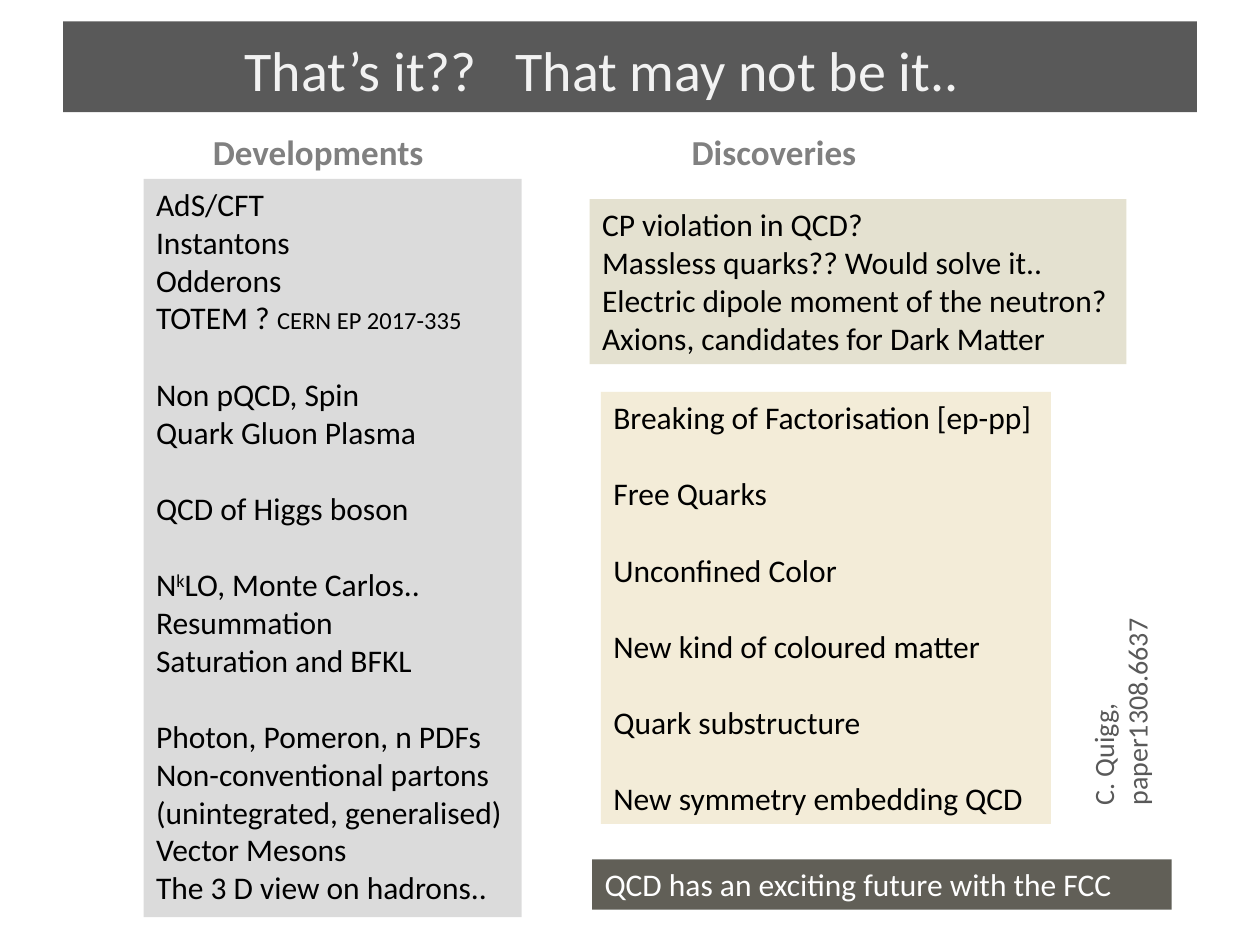
from dataclasses import dataclass

from lxml.etree import SubElement
from pptx import Presentation
from pptx.dml.color import RGBColor
from pptx.enum.shapes import MSO_SHAPE as Shape
from pptx.enum.text import MSO_ANCHOR as Anchor, PP_ALIGN as Align
from pptx.oxml.ns import qn
from pptx.util import Inches, Pt

COLORS = {
    "black": "000000", "white": "FFFFFF", "light": "F2F2F2",
    "dark": "595959", "grey": "808080", "gold": "DDC98E",
    "sand": "DDD9C3", "olive": "1E1C11",
}
GROUP_GAP = Pt(22)  # one line of 18 pt text


@dataclass
class Span:
    text: str
    size: int | None = None
    superscript: bool = False


Line = str | list[Span]


@dataclass
class Panel:
    """Filled box whose groups of lines are set apart by GROUP_GAP."""
    box: tuple[float, float, float, float]
    fill: str
    alpha: int
    groups: list[list[Line]]
    color: str = "black"


PANELS = [
    Panel((1.14, 1.42, 3, 5.86), "black", 14, [
        ["AdS/CFT", "Instantons", "Odderons",
         [Span("TOTEM ? "), Span("CERN EP 2017-335", size=14)]],
        ["Non pQCD, Spin", "Quark Gluon Plasma"],
        ["QCD of Higgs boson"],
        [[Span("N"), Span("k", superscript=True), Span("LO, Monte Carlos..")],
         "Resummation", "Saturation and BFKL"],
        ["Photon, Pomeron, n PDFs", "Non-conventional partons",
         "(unintegrated, generalised)", "Vector Mesons",
         "The 3 D view on hadrons.."],
    ]),
    Panel((4.77, 3.11, 3.57, 3.43), "gold", 34, [
        ["Breaking of Factorisation [ep-pp]"],
        ["Free Quarks"],
        ["Unconfined Color"],
        ["New kind of coloured matter"],
        ["Quark substructure"],
        ["New symmetry embedding QCD"],
    ]),
    Panel((4.68, 1.58, 4.26, 1.31), "sand", 78, [
        ["CP violation in QCD?", "Massless quarks?? Would solve it..",
         "Electric dipole moment of the neutron?",
         "Axions, candidates for Dark Matter"],
    ]),
    Panel((4.7, 6.82, 4.6, 0.4), "olive", 70,
          [["QCD has an exciting future with the FCC"]], "white"),
]


def rgb(name: str) -> RGBColor:
    return RGBColor.from_string(COLORS[name])


def fill_solid(s, color: str, alpha: int = 100) -> None:
    s.fill.solid()
    s.fill.fore_color.rgb = rgb(color)
    if alpha < 100:
        clr = s._element.spPr.find(qn("a:solidFill"))[0]
        SubElement(clr, qn("a:alpha"), val=str(alpha * 1000))


def add_run(p, text: str, size: int, color: str, bold: bool = False):
    r = p.add_run()
    r.text = text
    for name, value in {"name": "Calibri", "size": Pt(size), "bold": bold}.items():
        setattr(r.font, name, value)
    r.font.color.rgb = rgb(color)
    return r


def set_tab(p, pos: float) -> None:
    tabs = SubElement(p._p.get_or_add_pPr(), qn("a:tabLst"))
    SubElement(tabs, qn("a:tab"), pos=str(Inches(pos)), algn="l")


def add_panel(slide, panel: Panel) -> None:
    s = slide.shapes.add_shape(Shape.RECTANGLE, *map(Inches, panel.box))
    s.shadow.inherit = False
    s.line.fill.background()
    fill_solid(s, panel.fill, panel.alpha)
    tf = s.text_frame
    tf.word_wrap = True
    tf.vertical_anchor = Anchor.TOP
    p = None
    for group in panel.groups:
        for i, line in enumerate(group):
            first = p is None
            p = tf.paragraphs[0] if first else tf.add_paragraph()
            p.alignment = Align.LEFT
            if i == 0 and not first:
                p.space_before = GROUP_GAP
            for span in [Span(line)] if isinstance(line, str) else line:
                r = add_run(p, span.text, span.size or 18, panel.color)
                if span.superscript:
                    r._r.get_or_add_rPr().set("baseline", "30000")


def add_label(slide, box: tuple[float, float, float, float], text: str,
              size: int, color: str, bold: bool = False):
    s = slide.shapes.add_textbox(*map(Inches, box))
    s.text_frame.word_wrap = True
    add_run(s.text_frame.paragraphs[0], text, size, color, bold)
    return s


def format_title(s) -> None:
    box = {"left": 0.5, "top": 0.17, "width": 9, "height": 0.72}
    for name, value in box.items():
        setattr(s, name, Inches(value))
    fill_solid(s, "dark")
    tf = s.text_frame
    tf.vertical_anchor = Anchor.MIDDLE
    tf.margin_left, tf.margin_top = Inches(1.44), Inches(0.09)
    p = tf.paragraphs[0]
    p.alignment = Align.LEFT
    set_tab(p, 2.15)
    add_run(p, "That’s it??\tThat may not be it..", 32, "light")


def main() -> None:
    prs = Presentation()
    prs.slide_width, prs.slide_height = Inches(10), Inches(7.5)
    slide = prs.slides.add_slide(prs.slide_layouts[5])
    format_title(slide.shapes.title)
    for panel in PANELS:
        add_panel(slide, panel)

    headings = add_label(slide, (1.53, 0.99, 5.84, 0.44),
                         "Developments\tDiscoveries", 20, "grey", True)
    headings.text_frame.margin_left = Inches(0.16)
    set_tab(headings.text_frame.paragraphs[0], 3.8)

    citation = add_label(slide, (7.51, 5.06, 2.49, 0.37),
                         "C. Quigg, paper1308.6637", 16, "dark")
    citation.text_frame.word_wrap = False
    citation.rotation = 270
    prs.save("out.pptx")


if __name__ == "__main__":
    main()
